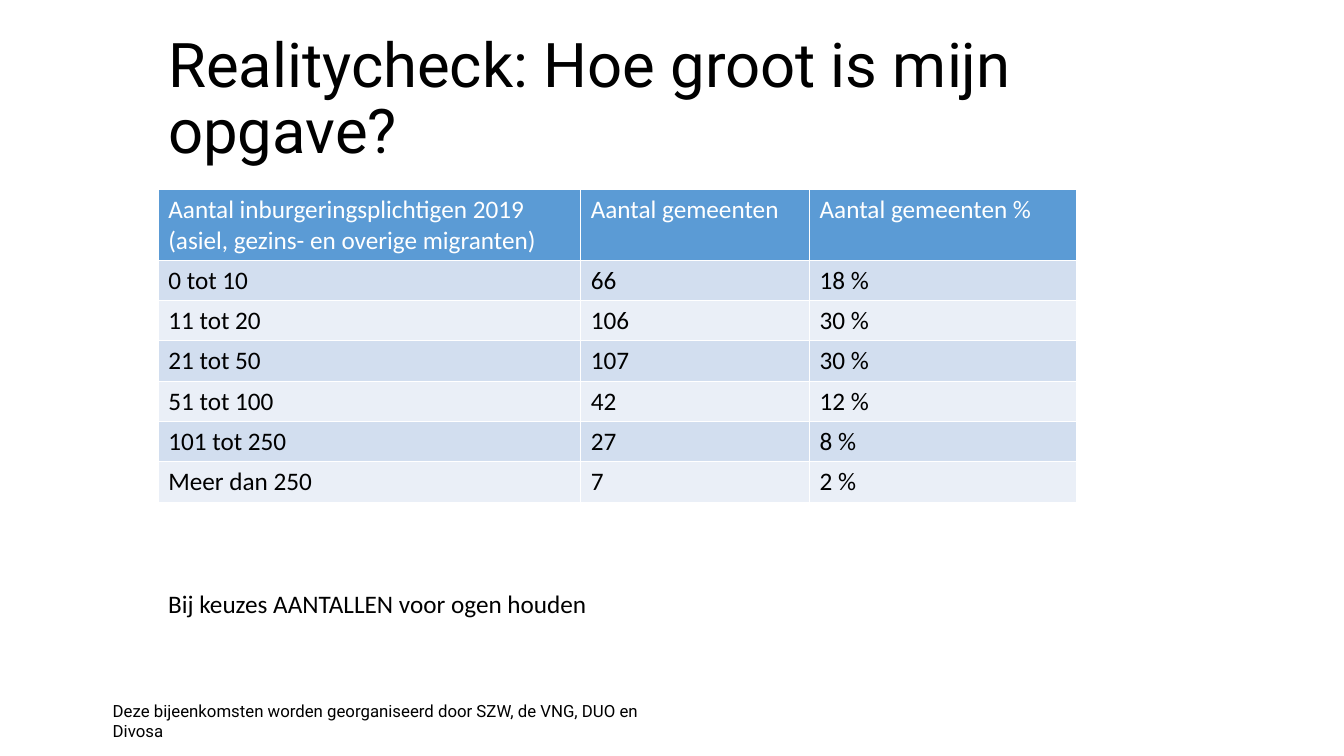
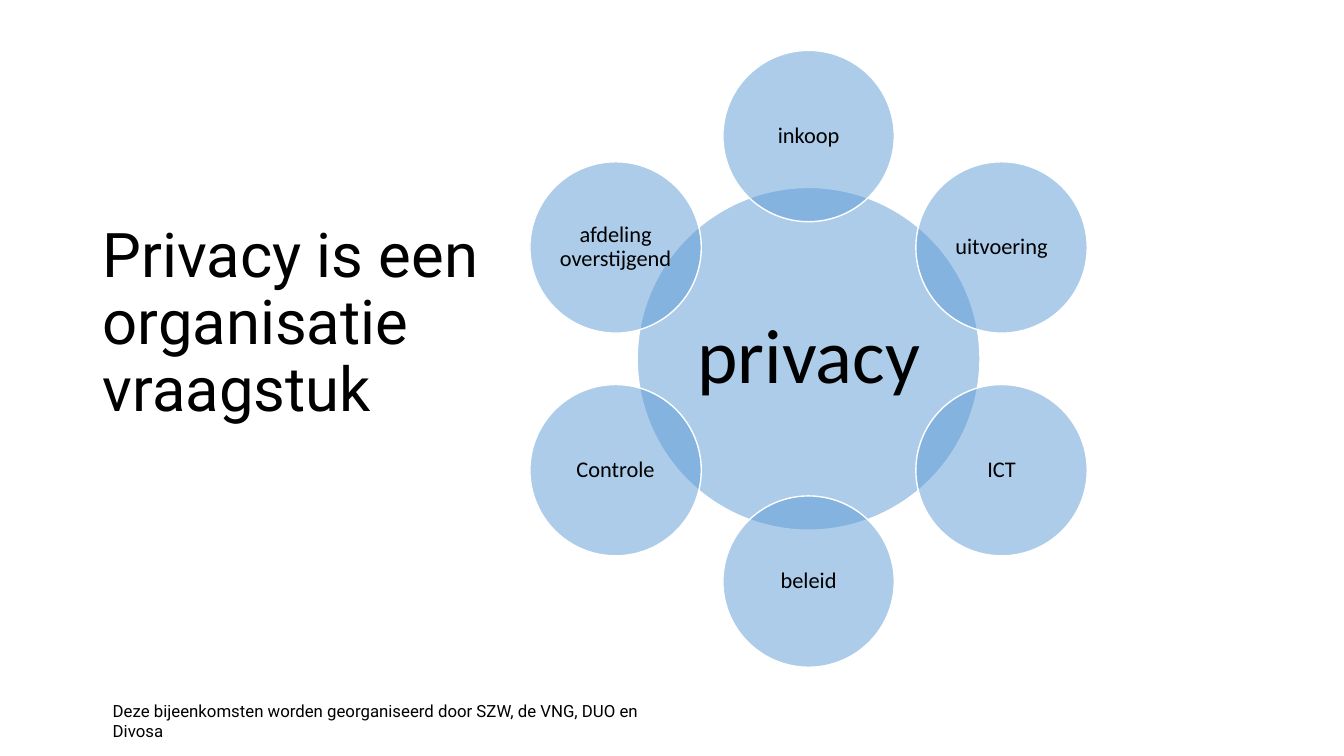
import math

from lxml import etree
from pptx import Presentation
from pptx import util as u
from pptx.dml.color import RGBColor
from pptx.enum import shapes, text
from pptx.oxml import ns

EMU_PER_PX = 9144  # 100 px to the inch
COLORS = {
    "ink": "000000",
    "white": "FFFFFF",
    "blue": "5B9BD5",
    "band_dark": "D2DEEF",
    "band_light": "EAEFF7",
}
HEADING_FONT = "Roboto"
BODY_FONT = "Calibri"
FOOTER = "Deze bijeenkomsten worden georganiseerd door SZW, de VNG, DUO en Divosa"

COLUMN_WIDTHS = (419, 227, 265)
HEADER_HEIGHT, ROW_HEIGHT = 70, 40
TABLE_ROWS = [
    ("Aantal inburgeringsplichtigen 2019\n(asiel, gezins- en overige migranten)",
     "Aantal gemeenten", "Aantal gemeenten %"),
    ("0 tot 10", "66", "18 %"),
    ("11 tot 20", "106", "30 %"),
    ("21 tot 50", "107", "30 %"),
    ("51 tot 100", "42", "12 %"),
    ("101 tot 250", "27", "8 %"),
    ("Meer dan 250", "7", "2 %"),
]

# Clockwise from the top
PETALS = ("inkoop", "uitvoering", "ICT", "beleid", "Controle", "afdeling overstijgend")
HUB_CENTER = (802, 356)
HUB_SIZE, PETAL_SIZE, ORBIT = 340, 170, 221


def px(length):
    return u.Emu(round(length * EMU_PER_PX))


def rgb(name):
    return RGBColor.from_string(COLORS[name])


def style_text(frame, size, font, color="ink", spacing=None, align=None):
    for para in frame.paragraphs:
        para.font.size = u.Pt(size)
        para.font.name = font
        para.font.bold = False
        para.font.color.rgb = rgb(color)
        para.line_spacing = spacing
        para.alignment = align


def add_text(page, words, area, size, font, anchor=text.MSO_ANCHOR.TOP, spacing=None):
    frame = page.shapes.add_textbox(*map(px, area)).text_frame
    frame.word_wrap = True
    frame.vertical_anchor = anchor
    frame.text = words
    style_text(frame, size, font, spacing=spacing)


def add_page(deck, title, title_area):
    """Blank page with the shared footer and title style."""
    page = deck.slides.add_slide(deck.slide_layouts[6])
    add_text(page, FOOTER, (102, 690, 546, 30), 12, HEADING_FONT)
    add_text(page, title, title_area, 44, HEADING_FONT, text.MSO_ANCHOR.MIDDLE, 0.9)
    return page


def add_cell_borders(cell):
    properties = cell._tc.get_or_add_tcPr()
    for index, side in enumerate(("lnL", "lnR", "lnT", "lnB")):
        line = etree.Element(ns.qn("a:" + side), w=str(u.Pt(1)))
        fill = etree.SubElement(line, ns.qn("a:solidFill"))
        etree.SubElement(fill, ns.qn("a:srgbClr"), val=COLORS["white"])
        properties.insert(index, line)


def add_table(page, rows, left, top):
    heights = [HEADER_HEIGHT] + [ROW_HEIGHT] * (len(rows) - 1)
    area = (left, top, sum(COLUMN_WIDTHS), sum(heights))
    table = page.shapes.add_table(len(rows), len(COLUMN_WIDTHS), *map(px, area)).table
    for column, width in zip(table.columns, COLUMN_WIDTHS):
        column.width = px(width)
    for index, (row, height, values) in enumerate(zip(table.rows, heights, rows)):
        row.height = px(height)
        band = "blue" if index == 0 else ("band_light", "band_dark")[index % 2]
        for cell, value in zip(row.cells, values):
            cell.text = value
            style_text(cell.text_frame, 18, BODY_FONT, "ink" if index else "white")
            cell.fill.solid()
            cell.fill.fore_color.rgb = rgb(band)
            add_cell_borders(cell)


def add_circle(page, words, center, diameter, size, inset):
    left, top = (middle - diameter / 2 for middle in center)
    circle = page.shapes.add_shape(
        shapes.MSO_SHAPE.OVAL, px(left), px(top), px(diameter), px(diameter))
    circle.shadow.inherit = False
    circle.fill.solid()
    circle.fill.fore_color.rgb = rgb("blue")
    tint = circle.fill._xPr.find(ns.qn("a:solidFill"))[0]
    etree.SubElement(tint, ns.qn("a:alpha"), val="50000")
    circle.line.color.rgb = rgb("white")
    circle.line.width = u.Pt(1)
    frame = circle.text_frame
    frame.word_wrap = True
    frame.vertical_anchor = text.MSO_ANCHOR.MIDDLE
    frame.margin_left = frame.margin_right = px(inset)
    frame.margin_top = frame.margin_bottom = px(inset)
    frame.text = words
    style_text(frame, size, BODY_FONT, spacing=0.9, align=text.PP_ALIGN.CENTER)


def add_flower(page, hub, petals):
    add_circle(page, hub, HUB_CENTER, HUB_SIZE, 55, 8)
    for index, petal in enumerate(petals):
        angle = math.tau * index / len(petals)
        center = (HUB_CENTER[0] + ORBIT * math.sin(angle),
                  HUB_CENTER[1] - ORBIT * math.cos(angle))
        add_circle(page, petal, center, PETAL_SIZE, 16, 2)


def main():
    deck = Presentation()
    deck.slide_width, deck.slide_height = px(1333), px(750)

    # Table of municipalities by number of newcomers
    page = add_page(deck, "Realitycheck: Hoe groot is mijn opgave?", (157, 35, 1095, 129))
    add_text(page, "Bij keuzes AANTALLEN voor ogen houden", (157, 579, 706, 40), 18, BODY_FONT)
    add_table(page, TABLE_ROWS, 157, 188)

    # Privacy surrounded by the departments it touches
    page = add_page(deck, "Privacy is een organisatie vraagstuk", (92, 140, 413, 364))
    add_flower(page, "privacy", PETALS)

    deck.save("out.pptx")


if __name__ == "__main__":
    main()
